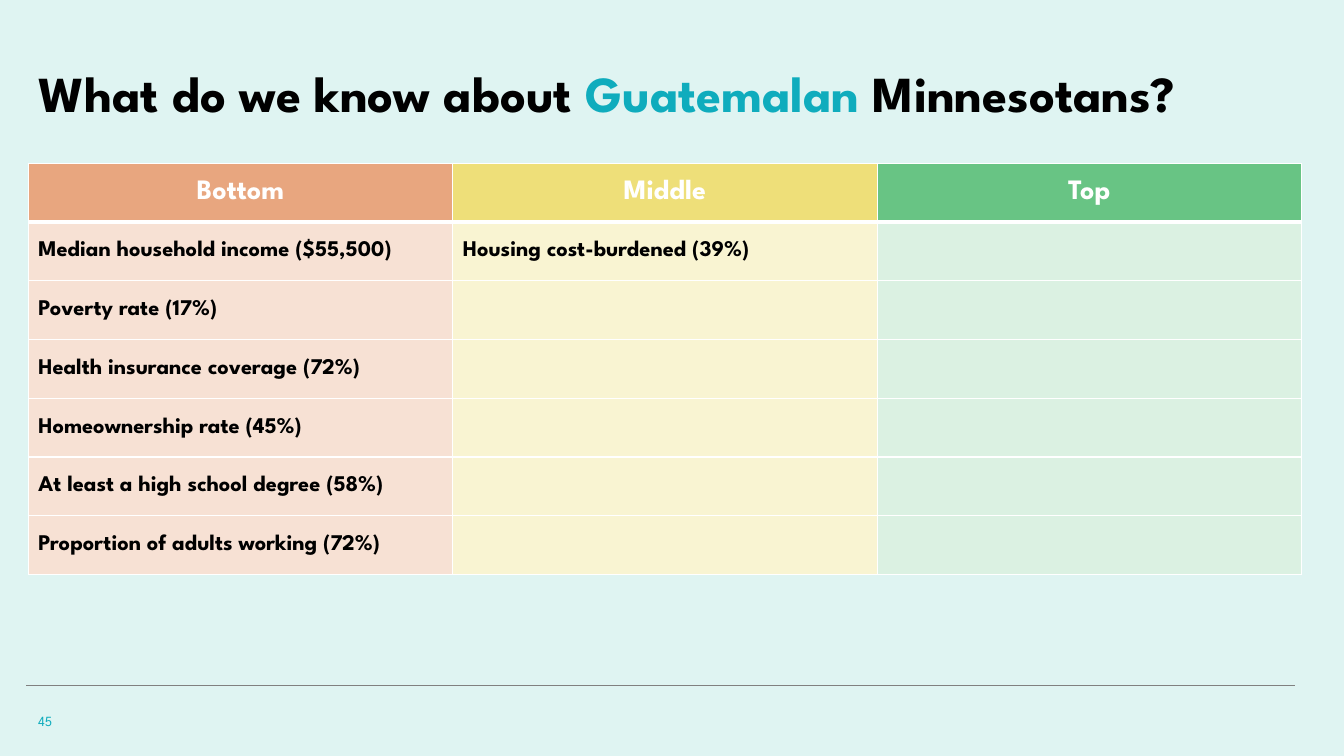
from pptx import Presentation
from pptx.dml.color import RGBColor
from pptx.enum.shapes import MSO_CONNECTOR
from pptx.enum.text import MSO_ANCHOR, MSO_AUTO_SIZE, PP_ALIGN
from pptx.oxml.ns import qn
from pptx.util import Inches, Pt
from lxml.etree import SubElement

BLACK = RGBColor(0x00, 0x00, 0x00)
WHITE = RGBColor(0xFF, 0xFF, 0xFF)
GRAY = RGBColor(0x80, 0x80, 0x80)
TEAL = RGBColor(0x0F, 0xAC, 0xBD)
PALE_TEAL = RGBColor(0xDF, 0xF4, 0xF2)
ORANGE = RGBColor(0xE8, 0xA6, 0x7F)
PALE_ORANGE = RGBColor(0xF7, 0xE1, 0xD4)
YELLOW = RGBColor(0xEE, 0xDF, 0x79)
PALE_YELLOW = RGBColor(0xF9, 0xF4, 0xD2)
GREEN = RGBColor(0x68, 0xC4, 0x84)
PALE_GREEN = RGBColor(0xDB, 0xF1, 0xE2)

FONT = "League Spartan"
LEFT = Inches(0.28)
COLUMN_WIDTH = Inches(4.21)
ROW_HEIGHT = Inches(4.08 / 7)

TITLE_FORMAT = {"name": FONT, "size": Pt(36), "bold": True}
HEADER_FORMAT = {"name": FONT, "size": Pt(20), "bold": True}
BODY_FORMAT = {"name": FONT, "size": Pt(16), "bold": True}
NUMBER_FORMAT = {"name": FONT, "size": Pt(10), "bold": False}

TITLE = [
    ("What do we know about ", BLACK),
    ("Guatemalan", TEAL),
    (" Minnesotans?", BLACK),
]
RANKINGS = [
    ("Bottom", ORANGE, PALE_ORANGE, [
        "Median household income ($55,500)",
        "Poverty rate (17%)",
        "Health insurance coverage (72%)",
        "Homeownership rate (45%)",
        "At least a high school degree (58%)",
        "Proportion of adults working (72%)",
    ]),
    ("Middle", YELLOW, PALE_YELLOW, ["Housing cost-burdened (39%)"]),
    ("Top", GREEN, PALE_GREEN, []),
]


def add_run(paragraph, text, color, format_values):
    run = paragraph.add_run()
    run.text = text
    for name, value in format_values.items():
        setattr(run.font, name, value)
    run.font.color.rgb = color


def set_title(slide):
    title = slide.shapes.title
    title.left, title.top = LEFT, Inches(0.4)
    title.width, title.height = Inches(12.85), Inches(0.87)
    frame = title.text_frame
    frame.auto_size = MSO_AUTO_SIZE.NONE
    frame.vertical_anchor = MSO_ANCHOR.BOTTOM
    paragraph = frame.paragraphs[0]
    paragraph.alignment = PP_ALIGN.LEFT
    paragraph.line_spacing = 0.9
    for text, color in TITLE:
        add_run(paragraph, text, color, TITLE_FORMAT)


def set_borders(cell, top, bottom):
    properties = cell._tc.get_or_add_tcPr()
    for side, width in (("L", 1), ("R", 1), ("T", top), ("B", bottom)):
        line = SubElement(properties, qn(f"a:ln{side}"), w=str(Pt(width)))
        fill = SubElement(line, qn("a:solidFill"))
        SubElement(fill, qn("a:srgbClr"), val=str(WHITE))


def fill_cell(cell, text, color, fill, alignment, format_values):
    cell.fill.solid()
    cell.fill.fore_color.rgb = fill
    cell.vertical_anchor = MSO_ANCHOR.MIDDLE
    if text:
        paragraph = cell.text_frame.paragraphs[0]
        paragraph.alignment = alignment
        add_run(paragraph, text, color, format_values)


def add_rankings_table(slide):
    row_count = 1 + max(len(items) for *_, items in RANKINGS)
    column_count = len(RANKINGS)
    table = slide.shapes.add_table(
        row_count, column_count, LEFT, Inches(1.62),
        COLUMN_WIDTH * column_count, ROW_HEIGHT * row_count).table
    table.horz_banding = False
    for row in table.rows:
        row.height = ROW_HEIGHT
    for column_index, (heading, strong, pale, items) in enumerate(RANKINGS):
        table.columns[column_index].width = COLUMN_WIDTH
        for row_index in range(row_count):
            cell = table.cell(row_index, column_index)
            set_borders(cell, 3 if row_index == 1 else 1, 3 if row_index == 0 else 1)
            if row_index == 0:
                fill_cell(cell, heading, WHITE, strong, PP_ALIGN.CENTER, HEADER_FORMAT)
            else:
                text = items[row_index - 1] if row_index <= len(items) else ""
                fill_cell(cell, text, BLACK, pale, PP_ALIGN.LEFT, BODY_FORMAT)


def add_footer_line(slide):
    line = slide.shapes.add_connector(
        MSO_CONNECTOR.STRAIGHT, Inches(0.26), Inches(6.8), Inches(12.84), Inches(6.8))
    line.line.color.rgb = GRAY
    line.line.width = Pt(0.5)
    SubElement(line._element.spPr, qn("a:effectLst"))


def add_page_number(slide, number):
    box = slide.shapes.add_textbox(LEFT, Inches(6.95), Inches(3), Inches(0.4))
    frame = box.text_frame
    frame.word_wrap = True
    frame.vertical_anchor = MSO_ANCHOR.MIDDLE
    add_run(frame.paragraphs[0], number, TEAL, NUMBER_FORMAT)


def main():
    presentation = Presentation()
    presentation.slide_width = Inches(13.33)
    presentation.slide_height = Inches(7.5)
    slide = presentation.slides.add_slide(presentation.slide_layouts[5])
    slide.background.fill.solid()
    slide.background.fill.fore_color.rgb = PALE_TEAL
    add_footer_line(slide)
    set_title(slide)
    add_rankings_table(slide)
    add_page_number(slide, "45")
    presentation.save("out.pptx")


if __name__ == "__main__":
    main()
